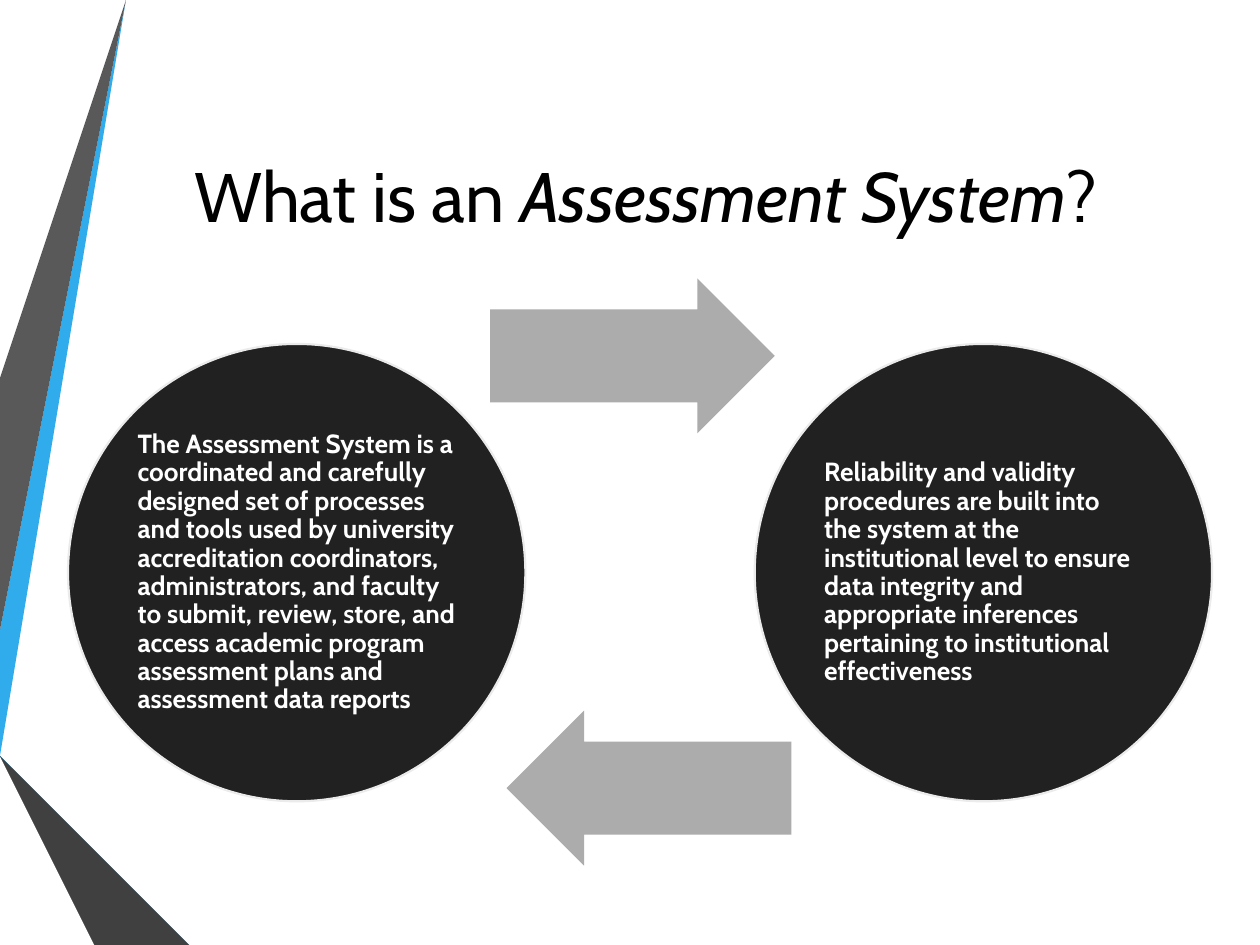
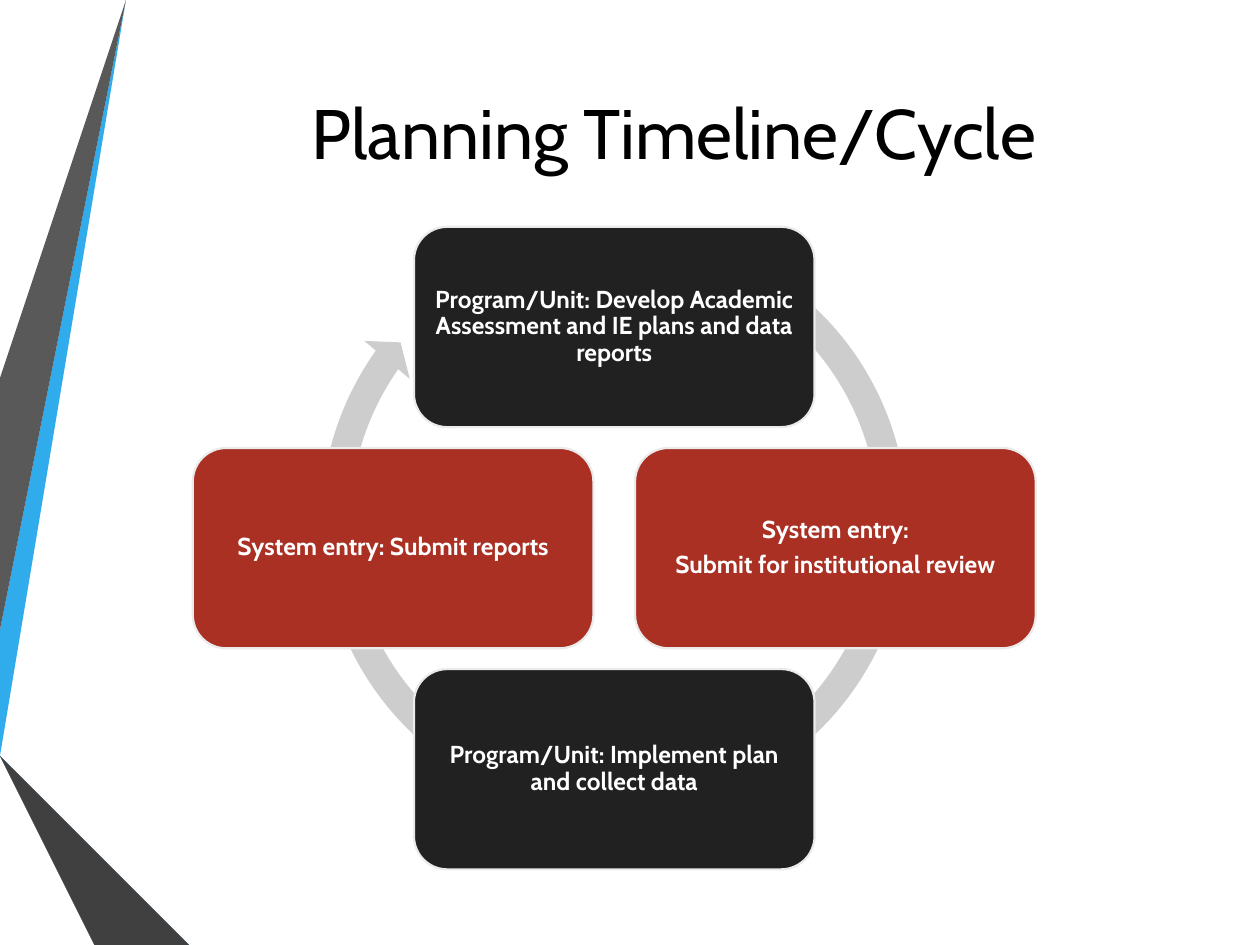
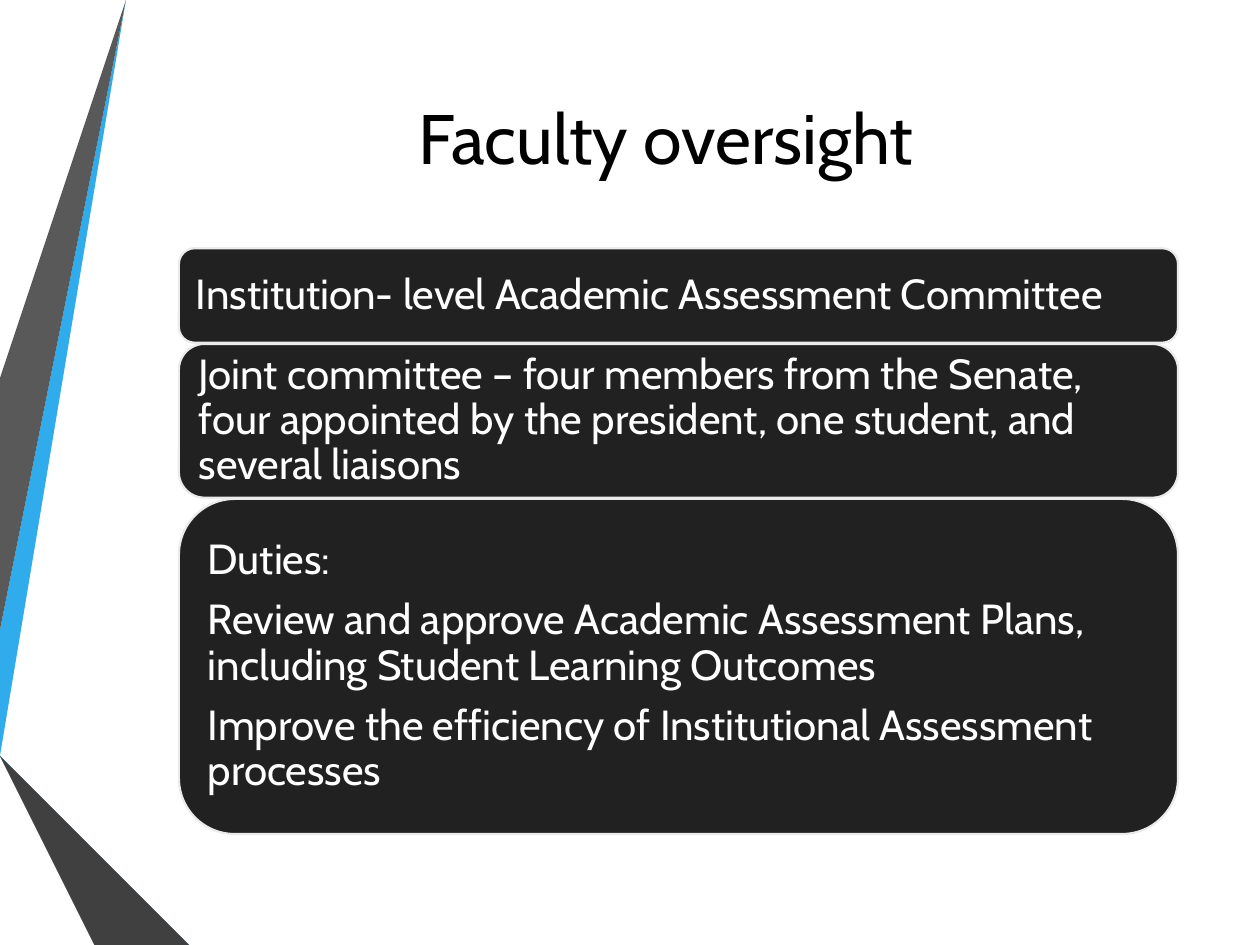
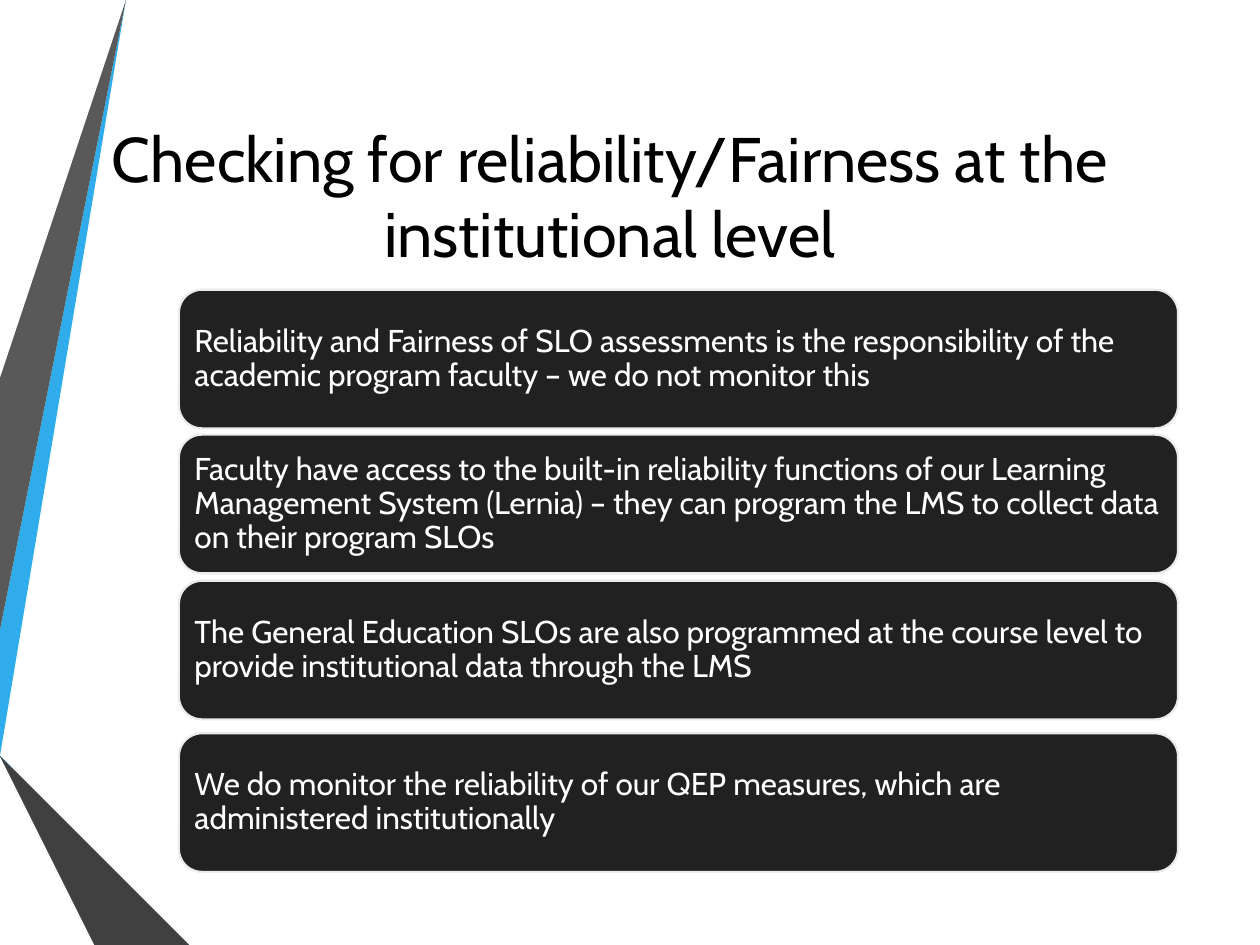
"""Build four slides on an institutional assessment system."""
from dataclasses import dataclass
from math import cos, pi, sin
from typing import Any

from pptx import Presentation
from pptx import util as u
from pptx.dml.color import RGBColor
from pptx.enum import shapes, text

FONT = "Cabin"
BLACK = RGBColor(0x00, 0x00, 0x00)
WHITE = RGBColor(0xFF, 0xFF, 0xFF)
CHARCOAL = RGBColor(0x21, 0x21, 0x21)
RED = RGBColor(0xA9, 0x30, 0x23)
OUTLINE = RGBColor(0xEB, 0xEB, 0xEB)
ARROW_GREY = RGBColor(0xAC, 0xAC, 0xAC)
CYCLE_GREY = RGBColor(0xCD, 0xCD, 0xCD)
SKY = RGBColor(0x30, 0xAC, 0xEC)
SLATE = RGBColor(0x59, 0x59, 0x59)
DARK_EDGE = RGBColor(0x26, 0x26, 0x26)
BLUE_EDGE = RGBColor(0x0C, 0x5A, 0x82)
BLUE = RGBColor(0x12, 0x87, 0xC3)
GREY = RGBColor(0x40, 0x40, 0x40)

KIND = shapes.MSO_SHAPE
CENTER = text.PP_ALIGN.CENTER
LEFT = text.PP_ALIGN.LEFT
TEXT_INSET = {KIND.OVAL: 0.1464, KIND.ROUNDED_RECTANGLE: 0.0488}


@dataclass(frozen=True)
class Box:
    """A rectangle in inches."""

    left: float
    top: float
    width: float
    height: float

    def lengths(self) -> list[u.Length]:
        """Return left, top, width and height as lengths."""
        return [u.Inches(value) for value in (self.left, self.top, self.width, self.height)]

    def inset(self, gap: float) -> "Box":
        """Return the rectangle shrunk by the same gap on every side."""
        return Box(self.left + gap, self.top + gap, self.width - 2 * gap, self.height - 2 * gap)


@dataclass(frozen=True)
class Band:
    """A coloured side band and its corner points in inches."""

    color: RGBColor
    points: tuple[tuple[float, float], ...]


@dataclass(frozen=True)
class CardStyle:
    """The look shared by the cards of one slide."""

    kind: Any
    size: int
    margin: float
    bold: bool = False
    align: Any = LEFT


BANDS = (
    Band(SKY, ((0, 5.44), (0, 5.75), (0.22, 5.79), (1.17, 0), (0.89, 0))),
    Band(SLATE, ((0.83, 0), (0.55, 0), (0, 3.36), (0, 5.06))),
    Band(DARK_EDGE, ((0, 6.19), (0, 6.21), (0.93, 7.5), (0.99, 7.5))),
    Band(BLUE_EDGE, ((0, 5.79), (0, 5.8), (1.56, 7.5), (1.63, 7.5))),
    Band(BLUE, ((0, 5.79), (1.63, 7.5), (2.33, 7.5), (0.22, 5.79), (0, 5.75))),
    Band(GREY, ((0, 6.19), (0.99, 7.5), (1.51, 7.5), (0, 5.86))),
)
CIRCLE = CardStyle(KIND.OVAL, 15, 0.02, bold=True)
STEP = CardStyle(KIND.ROUNDED_RECTANGLE, 14, 0.06, bold=True, align=CENTER)
LARGE_ROW = CardStyle(KIND.ROUNDED_RECTANGLE, 24, 0.1)
SMALL_ROW = CardStyle(KIND.ROUNDED_RECTANGLE, 18, 0.07)
ROW_LEFT, ROW_WIDTH = 1.42, 7.93


def apply(target: Any, values: dict[str, Any]) -> None:
    """Set each named attribute on the target."""
    for name, value in values.items():
        setattr(target, name, value)


def add_run(paragraph: Any, wording: str, size: int, color: RGBColor, **extra: bool) -> None:
    """Add a formatted run to a paragraph."""
    run = paragraph.add_run()
    run.text = wording
    apply(run.font, {"name": FONT, "size": u.Pt(size), **extra})
    run.font.color.rgb = color


def paint(shape: Any, color: RGBColor, outline: RGBColor | None = None) -> None:
    """Give a shape a flat fill and an optional outline."""
    shape.shadow.inherit = False
    shape.fill.solid()
    shape.fill.fore_color.rgb = color
    if outline is None:
        shape.line.fill.background()
    else:
        shape.line.color.rgb = outline
        shape.line.width = u.Pt(1.25)


def add_bands(slide: Any) -> None:
    """Draw the side bands and move them to the layout shared by all slides."""
    layout = slide.slide_layout
    tree = layout.shapes.element
    for placeholder in list(layout.placeholders):
        if placeholder.placeholder_format.type != shapes.PP_PLACEHOLDER.TITLE:
            tree.remove(placeholder.element)
    for band in BANDS:
        builder = slide.shapes.build_freeform(*band.points[0], scale=u.Inches(1))
        builder.add_line_segments(band.points[1:], close=True)
        shape = builder.convert_to_shape()
        paint(shape, band.color)
        shape.name = f"Side band {BANDS.index(band) + 1}"
    for shape in list(slide.shapes)[-len(BANDS):]:
        tree.append(shape.element)


def add_slide(presentation: Any, box: Box, *title: str, size: int = 40, italic: int = -1) -> Any:
    """Add a slide with a centred title, one of whose runs may be italic."""
    slide = presentation.slides.add_slide(presentation.slide_layouts[5])
    placeholder = slide.shapes.title
    apply(placeholder, dict(zip(("left", "top", "width", "height"), box.lengths())))
    frame = placeholder.text_frame
    apply(frame, {"auto_size": text.MSO_AUTO_SIZE.NONE, "word_wrap": True,
                  "vertical_anchor": text.MSO_ANCHOR.MIDDLE})
    paragraph = frame.paragraphs[0]
    paragraph.alignment = CENTER
    for index, wording in enumerate(title):
        add_run(paragraph, wording, size, BLACK, italic=index == italic)
    return slide


def add_card(slide: Any, style: CardStyle, box: Box, *lines: str,
             color: RGBColor = CHARCOAL) -> None:
    """Draw a filled card with its text set inside the curved corners."""
    paint(slide.shapes.add_shape(style.kind, *box.lengths()), color, OUTLINE)
    inner = box.inset(TEXT_INSET[style.kind] * min(box.width, box.height))
    frame = slide.shapes.add_textbox(*inner.lengths()).text_frame
    apply(frame, {"word_wrap": True, "vertical_anchor": text.MSO_ANCHOR.MIDDLE})
    apply(frame, {f"margin_{side}": u.Inches(style.margin)
                  for side in ("left", "top", "right", "bottom")})
    for index, line in enumerate(lines):
        paragraph = frame.add_paragraph() if index else frame.paragraphs[0]
        apply(paragraph, {"alignment": style.align, "line_spacing": 0.9,
                          "space_after": u.Pt(style.size * 0.35)})
        add_run(paragraph, line, style.size, WHITE, bold=style.bold)


def add_arrow(slide: Any, kind: Any, box: Box, color: RGBColor,
              adjustments: tuple[float, ...], rotation: int = 0) -> None:
    """Draw a block arrow."""
    arrow = slide.shapes.add_shape(kind, *box.lengths())
    paint(arrow, color)
    arrow.rotation = rotation
    for index, value in enumerate(adjustments):
        arrow.adjustments[index] = value


def build_definition(presentation: Any) -> None:
    """Build the slide that defines the assessment system."""
    slide = add_slide(presentation, Box(0.5, 0.84, 9.25, 1.41),
                      "What is an ", "Assessment System", "?", italic=1)
    add_bands(slide)
    columns = (
        (0.54, "The Assessment System is a coordinated and carefully designed set of processes "
               "and tools used by university accreditation coordinators, administrators, and "
               "faculty to submit, review, store, and access academic program assessment plans "
               "and assessment data reports", Box(3.89, 2.21, 2.26, 1.23), 0),
        (5.99, "Reliability and validity procedures are built into the system at the "
               "institutional level to ensure data integrity and appropriate inferences "
               "pertaining to institutional effectiveness", Box(4.02, 5.64, 2.26, 1.23), 180),
    )
    for left, wording, arrow_box, rotation in columns:
        add_card(slide, CIRCLE, Box(left, 2.73, 3.63, 3.63), wording)
        add_arrow(slide, KIND.RIGHT_ARROW, arrow_box, ARROW_GREY, (0.6, 0.5), rotation)


def build_cycle(presentation: Any) -> None:
    """Build the planning cycle, its steps a quarter turn apart."""
    slide = add_slide(presentation, Box(0.9, 0.25, 8.77, 1.59), " Planning Timeline/Cycle")
    add_arrow(slide, KIND.CIRCULAR_ARROW, Box(2.43, 1.69, 4.89, 4.89), CYCLE_GREY,
              (0.047, 2.729, 129.208, 179.701, 0.048))
    steps = (
        ("Program/Unit: Develop Academic Assessment and IE plans and data reports",),
        ("System entry:", "Submit for institutional review"),
        ("Program/Unit: Implement plan and collect data",),
        ("System entry: Submit reports",),
    )
    radius = 1.755
    for index, lines in enumerate(steps):
        angle = index * pi / 2
        box = Box(3.285 + radius * sin(angle), 3.555 - radius * cos(angle), 3.18, 1.59)
        add_card(slide, STEP, box, *lines, color=RED if index % 2 else CHARCOAL)


def build_oversight(presentation: Any) -> None:
    """Build the faculty oversight slide, its rows stacked closely."""
    slide = add_slide(presentation, Box(1.07, 0.5, 8.43, 1.17), "Faculty oversight")
    rows = (
        (0.75, "Institution- level Academic Assessment Committee"),
        (1.22, "Joint committee – four members from the Senate, four appointed by the "
               "president, one student, and several liaisons"),
        (2.66, "Duties:",
         "Review and approve Academic Assessment Plans, including Student Learning Outcomes",
         "Improve the efficiency of Institutional Assessment processes"),
    )
    top = 1.97
    for height, *lines in rows:
        add_card(slide, LARGE_ROW, Box(ROW_LEFT, top, ROW_WIDTH, height), *lines)
        top += height + 0.01


def build_reliability(presentation: Any) -> None:
    """Build the slide on reliability and fairness checks."""
    slide = add_slide(presentation, Box(0.33, 0.84, 9.02, 1.41),
                      "Checking for reliability/Fairness at the institutional level", size=36)
    rows = (
        (2.3, "Reliability and Fairness of SLO assessments is the responsibility of the "
              "academic program faculty – we do not monitor this"),
        (3.45, "Faculty have access to the built-in reliability functions of our Learning "
               "Management System (Lernia) – they can program the LMS to collect data on "
               "their program SLOs"),
        (4.61, "The General Education SLOs are also programmed at the course level to "
               "provide institutional data through the LMS"),
        (5.82, "We do monitor the reliability of our QEP measures, which are administered "
               "institutionally"),
    )
    for top, wording in rows:
        add_card(slide, SMALL_ROW, Box(ROW_LEFT, top, ROW_WIDTH, 1.1), wording)


def main() -> None:
    """Build and save the presentation."""
    presentation = Presentation()
    apply(presentation, {"slide_width": u.Inches(10), "slide_height": u.Inches(7.5)})
    for build in (build_definition, build_cycle, build_oversight, build_reliability):
        build(presentation)
    presentation.save("out.pptx")


if __name__ == "__main__":
    main()
